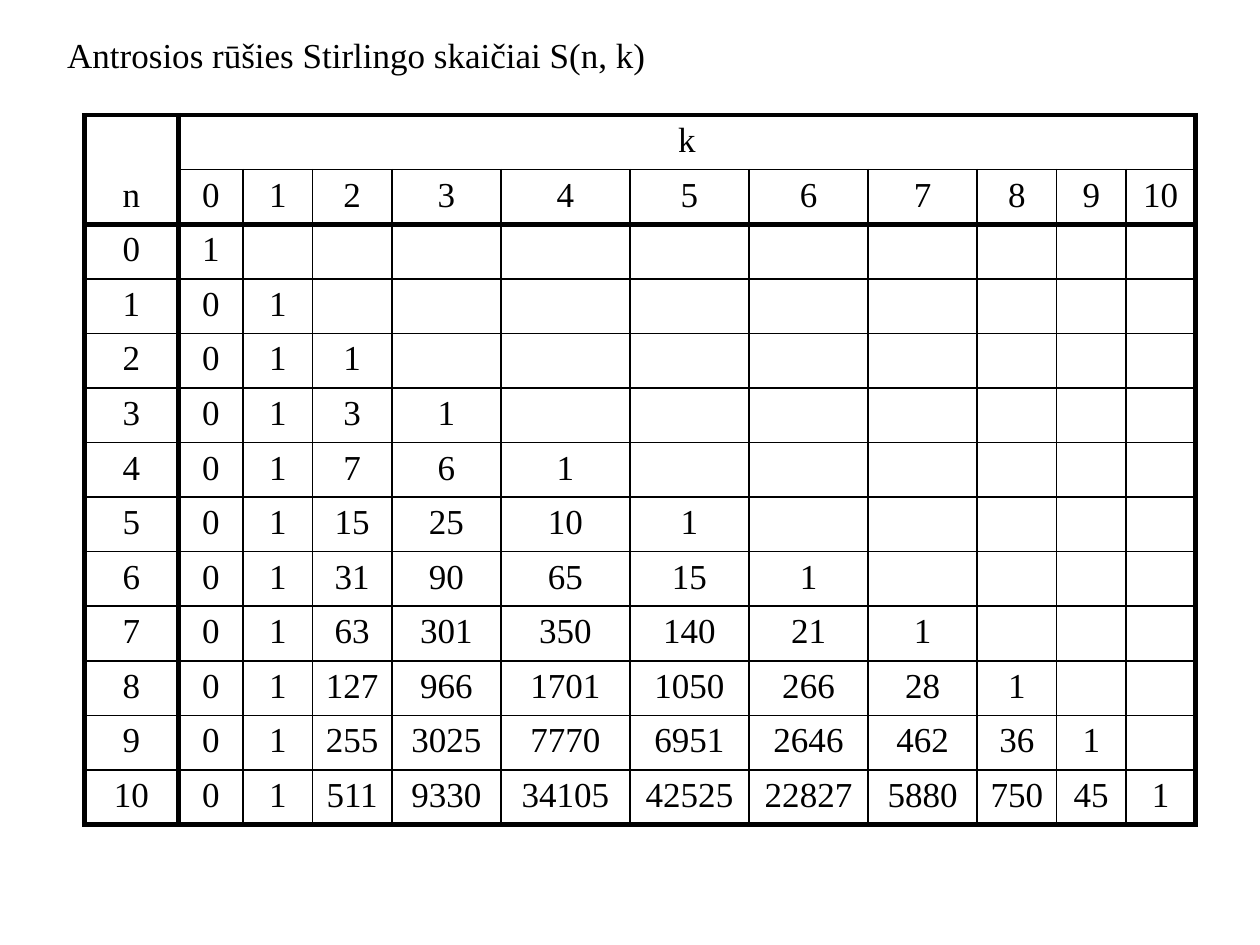
"""Build a slide with a table of Stirling numbers of the second kind."""
from lxml import etree
from pptx import Presentation
from pptx.dml.color import RGBColor
from pptx.enum.text import MSO_ANCHOR, PP_ALIGN
from pptx.oxml.ns import qn
from pptx.util import Cm, Pt

LEFT, CENTER = PP_ALIGN.LEFT, PP_ALIGN.CENTER
TOP = MSO_ANCHOR.TOP
FONT_FORMAT = {"name": "Times New Roman", "size": Pt(20), "bold": False}
INK = "000000"
LARGEST = 10
COLUMN_WIDTHS = [1.9, 1.3, 1.4, 1.6, 2.2, 2.6, 2.4, 2.4, 2.2, 1.6, 1.4, 1.4]
ROW_HEIGHT = 1.1
THIN, THICK = 1, 3
THICK_ROW_EDGES = {0, 2, LARGEST + 3}
THICK_COLUMN_EDGES = {0, 1, LARGEST + 2}


def write(frame, text, alignment):
    para = frame.paragraphs[0]
    para.alignment = alignment
    span = para.add_run()
    span.text = text
    for name, value in FONT_FORMAT.items():
        setattr(span.font, name, value)
    span.font.color.rgb = RGBColor.from_string(INK)


def add_border(cell, side, points):
    properties = cell._tc.get_or_add_tcPr()
    line = etree.SubElement(properties, qn(f"a:ln{side}"), w=str(Pt(points)))
    if points:
        fill = etree.SubElement(line, qn("a:solidFill"))
        etree.SubElement(fill, qn("a:srgbClr"), val=INK)
    else:
        etree.SubElement(line, qn("a:noFill"))


deck = Presentation()
deck.slide_width, deck.slide_height = Cm(25.4), Cm(19.05)
page = deck.slides.add_slide(deck.slide_layouts[5])

title = page.shapes.title
title.left, title.top, title.width, title.height = Cm(1.1), Cm(0.55), Cm(23.4), Cm(1.1)
title.text_frame.word_wrap = True
title.text_frame.vertical_anchor = TOP
write(title.text_frame, "Antrosios rūšies Stirlingo skaičiai S(n, k)", LEFT)

stirling = [[1]]
for n in range(1, LARGEST + 1):
    above = stirling[-1] + [0]
    stirling.append([0] + [k * above[k] + above[k - 1] for k in range(1, n + 1)])

rows = [["", "k"], ["n", *range(LARGEST + 1)]]
rows += [[n, *numbers] for n, numbers in enumerate(stirling)]

table = page.shapes.add_table(
    len(rows), len(COLUMN_WIDTHS), Cm(1.7), Cm(2.32),
    Cm(sum(COLUMN_WIDTHS)), Cm(ROW_HEIGHT * len(rows))).table
table.first_row = False
table.horz_banding = False
for column, width in zip(table.columns, COLUMN_WIDTHS):
    column.width = Cm(width)
for row in table.rows:
    row.height = Cm(ROW_HEIGHT)
table.cell(0, 1).merge(table.cell(0, LARGEST + 1))

for r, values in enumerate(rows):
    for c in range(len(COLUMN_WIDTHS)):
        cell = table.cell(r, c)
        if cell.is_spanned:
            continue
        right = c + (cell.span_width if cell.is_merge_origin else 1)
        for side, edge in (("L", c), ("R", right)):
            add_border(cell, side, THICK if edge in THICK_COLUMN_EDGES else THIN)
        for side, edge in (("T", r), ("B", r + 1)):
            inside_heading = c == 0 and edge == 1
            weight = THICK if edge in THICK_ROW_EDGES else THIN
            add_border(cell, side, 0 if inside_heading else weight)
        cell.fill.background()
        cell.vertical_anchor = TOP
        if c < len(values) and values[c] != "":
            write(cell.text_frame, str(values[c]), CENTER)

deck.save("out.pptx")
